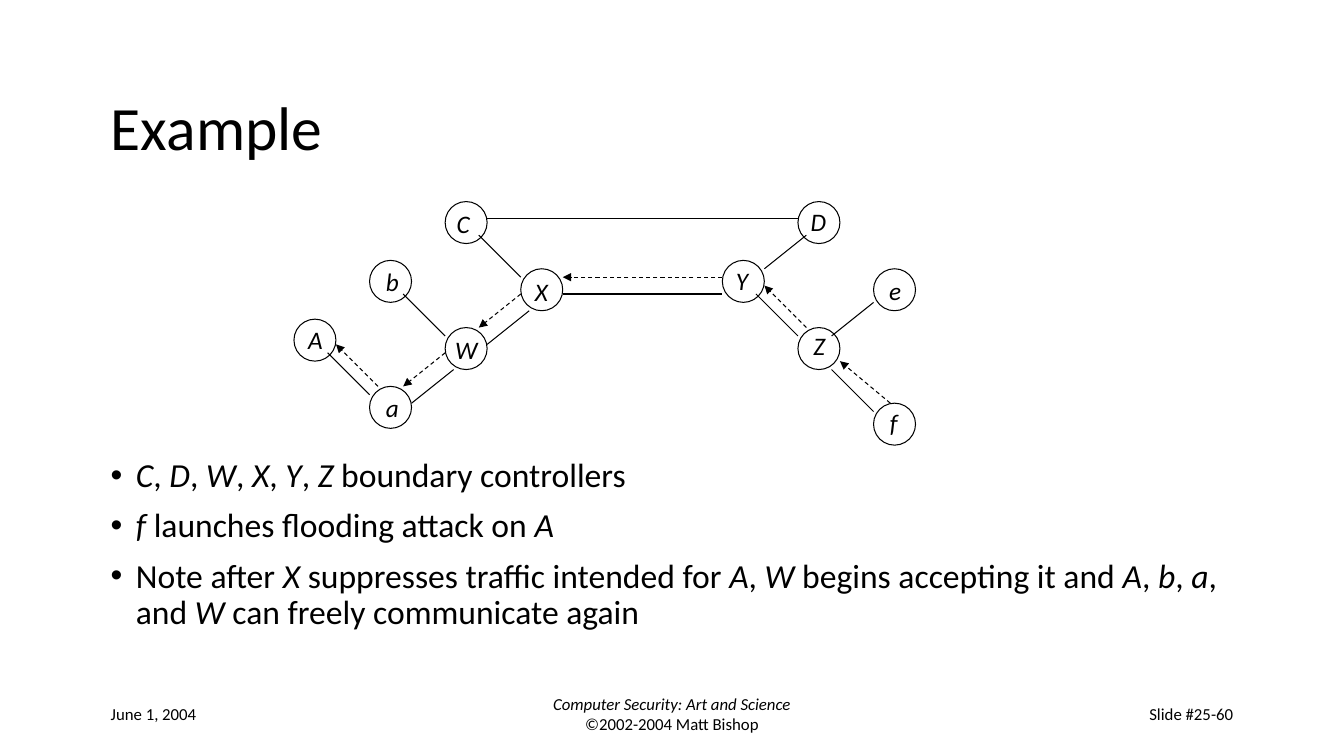
from lxml import etree
from pptx import Presentation
from pptx.dml.color import RGBColor
from pptx.enum.dml import MSO_LINE_DASH_STYLE as DASH
from pptx.enum.shapes import MSO_CONNECTOR, MSO_SHAPE
from pptx.enum.text import MSO_ANCHOR as ANCHOR, MSO_AUTO_SIZE as AUTO, PP_ALIGN as ALIGN
from pptx.oxml.ns import qn
from pptx.util import Pt

BLACK = RGBColor(0, 0, 0)
FONT = "Calibri"
UNIT = 6  # diagram grid step
NODE_SIZE = 5  # node diameter in grid steps
LABEL_HEIGHT = 29

# name: grid x, grid y, then label shift x, shift y and width in points
NODES = {
    "A": (0, 14, 3, 0, 25),
    "a": (9, 22, 4.5, 1, 24),
    "b": (9, 7, 4.5, 0.5, 24),
    "W": (18, 15, 0, 1.5, 31),
    "C": (18, 0, 1, 1.5, 24),
    "X": (27, 8, 3, 2, 24),
    "Y": (51, 7, 2.5, 0, 23),
    "Z": (60, 15, 4, -1.5, 23),
    "D": (60, 0, 2, -0.5, 26),
    "e": (69, 8, 4, 1, 23),
    "f": (69, 24, 4.5, -0.5, 20),
}

# grid x1, y1, x2, y2
LINKS = [
    (4, 18, 9, 23),  # A-a
    (19, 20, 14, 24),  # W-a
    (13, 11, 18, 16),  # b-W
    (22, 4, 27, 9),  # C-X
    (28, 13, 23, 17),  # X-W
    (55, 11, 60, 16),  # Y-Z
    (64, 16, 69, 12),  # Z-e
    (61, 4, 56, 8),  # D-Y
    (32, 11, 51, 11),  # X-Y
    (23, 2, 60, 2),  # C-D
    (64, 20, 69, 25),  # Z-f
]
ATTACK = [
    (71, 24, 65, 19),  # f to Z
    (61, 15, 56, 10),  # Z to Y
    (51, 9, 32, 9),  # Y to X
    (27, 11, 22, 15),  # X to W
    (18, 18, 13, 22),  # W to a
    (10, 22, 5, 17),  # a to A
]

# Asterisks enclose italic text
BULLETS = [
    "*C*, *D*, *W*, *X*, *Y*, *Z* boundary controllers",
    "*f* launches flooding attack on *A*",
    "Note after *X* suppresses traffic intended for *A*, *W* begins accepting it "
    "and *A*, *b*, *a*, and *W* can freely communicate again",
]


def fill_paragraph(p, text, size, align=ALIGN.LEFT):
    p.alignment = align
    for i, part in enumerate(text.split("*")):
        if part:
            r = p.add_run()
            r.text = part
            r.font.name, r.font.size = FONT, Pt(size)
            r.font.color.rgb = BLACK
            r.font.italic = i % 2 == 1


def add_text(slide, box, lines, size, align=ALIGN.LEFT, anchor=ANCHOR.TOP, wrap=True):
    tf = slide.shapes.add_textbox(*map(Pt, box)).text_frame
    tf.word_wrap = wrap
    tf.vertical_anchor = anchor
    for i, line in enumerate(lines):
        p = tf.add_paragraph() if i else tf.paragraphs[0]
        fill_paragraph(p, line, size, align)
    return tf


def add_title(slide, box, text):
    title = slide.shapes.title
    title.left, title.top, title.width, title.height = map(Pt, box)
    tf = title.text_frame
    tf.vertical_anchor = ANCHOR.MIDDLE
    p = tf.paragraphs[0]
    p.line_spacing = 0.9
    fill_paragraph(p, text, 44)


def add_line(slide, left, top, ends, arrow=False):
    x1, y1, x2, y2 = (UNIT * v for v in ends)
    line = slide.shapes.add_connector(
        MSO_CONNECTOR.STRAIGHT,
        Pt(left + x1), Pt(top + y1), Pt(left + x2), Pt(top + y2))
    line.line.color.rgb = BLACK
    line.line.width = Pt(0.75)
    if arrow:
        line.line.dash_style = DASH.DASH
        ln = line.line._get_or_add_ln()
        etree.SubElement(ln, qn("a:tailEnd"), type="triangle")
    etree.SubElement(line._element.spPr, qn("a:effectLst"))


def add_network(slide, left, top):
    # Nodes and their labels
    size = UNIT * NODE_SIZE
    for name, (col, row, dx, dy, width) in NODES.items():
        x, y = left + UNIT * col, top + UNIT * row
        sp = slide.shapes.add_shape(MSO_SHAPE.OVAL, Pt(x), Pt(y), Pt(size), Pt(size))
        sp.shadow.inherit = False
        sp.fill.background()
        sp.line.color.rgb = BLACK
        sp.line.width = Pt(0.75)
        tf = add_text(slide, (x + dx, y + dy, width, LABEL_HEIGHT),
                      [f"*{name}*"], 18, wrap=False)
        tf.auto_size = AUTO.SHAPE_TO_FIT_TEXT
    # Links, then the path of the attack
    for ends in LINKS:
        add_line(slide, left, top, ends)
    for ends in ATTACK:
        add_line(slide, left, top, ends, arrow=True)


def add_bullets(slide, box):
    tf = add_text(slide, box, BULLETS, 24)
    for i, p in enumerate(tf.paragraphs):
        p.line_spacing = 0.9
        p.space_before = Pt(10 if i else 0)
        pPr = p._p.get_or_add_pPr()
        pPr.set("marL", str(Pt(18)))
        pPr.set("indent", str(Pt(-18)))
        etree.SubElement(pPr, qn("a:buFont"), typeface="Arial")
        etree.SubElement(pPr, qn("a:buChar"), char="•")


def add_footer(slide, left, top, width, height):
    side, middle = 200, 304
    parts = [
        (left, side, ["June 1, 2004"], ALIGN.LEFT),
        (left + (width - middle) / 2, middle,
         ["*Computer Security: Art and Science*", "©2002-2004 Matt Bishop"], ALIGN.CENTER),
        (left + width - side, side, ["Slide #25-60"], ALIGN.RIGHT),
    ]
    for x, w, lines, align in parts:
        add_text(slide, (x, top, w, height), lines, 12, align, ANCHOR.MIDDLE)


def main():
    prs = Presentation()
    prs.slide_width, prs.slide_height = Pt(960), Pt(540)
    slide = prs.slides.add_slide(prs.slide_layouts[5])  # title only
    add_title(slide, (72, 48, 816, 90), "Example")
    add_network(slide, 210, 144)
    add_bullets(slide, (72, 324, 816, 156))
    add_footer(slide, 72, 492, 816, 36)
    prs.save("out.pptx")


if __name__ == "__main__":
    main()
